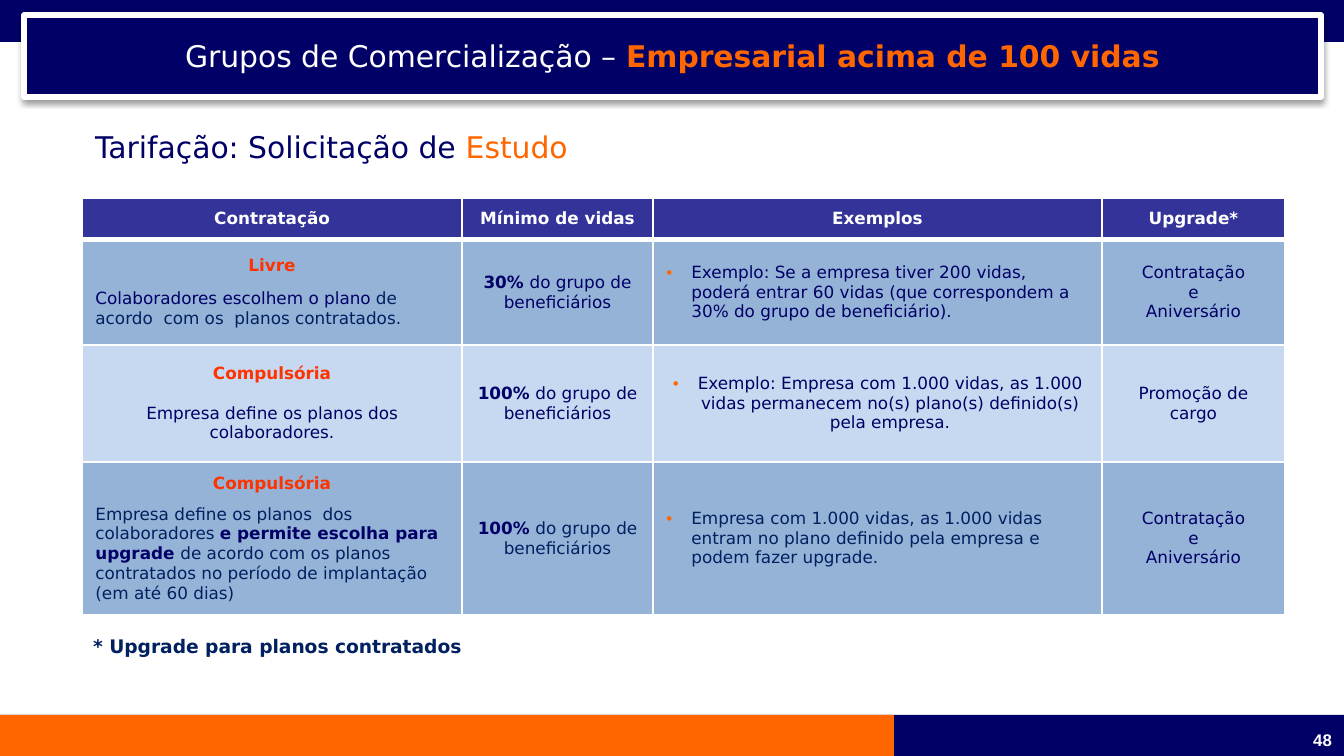
from lxml import etree
from pptx import Presentation
from pptx.dml.color import RGBColor
from pptx.enum.shapes import MSO_SHAPE
from pptx.enum.text import MSO_ANCHOR, MSO_AUTO_SIZE, PP_ALIGN
from pptx.util import Emu, Pt

RECTANGLE = MSO_SHAPE.RECTANGLE
MIDDLE = MSO_ANCHOR.MIDDLE
NO_FIT = MSO_AUTO_SIZE.NONE
LEFT, CENTER = PP_ALIGN.LEFT, PP_ALIGN.CENTER
NAMESPACE = "http://schemas.openxmlformats.org/drawingml/2006/main"
SCALE = 914400 / 134.4
WIDTH, HEIGHT = 1344, 756
FONT = "DejaVu Sans"
NAVY, ORANGE, WHITE = "000066", "FF6600", "FFFFFF"
INDIGO, RED, INK = "333399", "FF3300", "002060"
BLUE, PALE = "95B3D7", "C6D9F1"

COLUMNS = [380, 191, 449, 183]
ROW_HEIGHTS = [42, 105, 117, 153]
HEADINGS = ["Contratação", "Mínimo de vidas", "Exemplos", "Upgrade*"]


def px(length):
    """Turn pixels into EMU."""
    return Emu(round(length * SCALE))


def color(value):
    """Turn a hex string into a colour."""
    return RGBColor.from_string(value)


def element(markup):
    """Read one drawing element from its markup."""
    head, tail = markup.split(">", 1)
    mark = "/" if head.endswith("/") else ""
    head = head.rstrip("/")
    return etree.fromstring(f'{head} xmlns:a="{NAMESPACE}"{mark}>{tail}')


def span(text, ink=NAVY, bold=False):
    """Describe a stretch of text."""
    return text, ink, bold


def paragraph(*spans, align=CENTER, before=0, bullet=False):
    """Describe a paragraph."""
    return spans, align, before, bullet


def add_bullet(para):
    """Give a paragraph an orange bullet and a hanging indent."""
    properties = para._p.get_or_add_pPr()
    properties.set("marL", str(px(25)))
    properties.set("indent", str(-px(25)))
    properties.append(element(f'<a:buClr><a:srgbClr val="{ORANGE}"/></a:buClr>'))
    properties.append(element('<a:buFont typeface="Arial"/>'))
    properties.append(element('<a:buChar char="•"/>'))


def write(frame, paragraphs, size, font=FONT):
    """Fill a text frame with paragraphs."""
    for index, (spans, align, before, bullet) in enumerate(paragraphs):
        para = frame.add_paragraph() if index else frame.paragraphs[0]
        para.alignment = align
        para.space_before = Pt(before)
        if bullet:
            add_bullet(para)
        for text, ink, bold in spans:
            run = para.add_run()
            run.text = text
            run.font.name = font
            run.font.size = Pt(size)
            run.font.bold = bold
            run.font.color.rgb = color(ink)


def add_band(page, box, fill):
    """Draw a plain band of colour."""
    band = page.shapes.add_shape(RECTANGLE, *map(px, box))
    band.shadow.inherit = False
    band.fill.solid()
    band.fill.fore_color.rgb = color(fill)
    band.line.fill.background()


def add_label(page, box, spans, size, font=FONT):
    """Place a single line of text."""
    label = page.shapes.add_textbox(*map(px, box))
    label.text_frame.word_wrap = False
    write(label.text_frame, [paragraph(*spans, align=LEFT)], size, font)


def place_title(page, box, spans):
    """Shape the title placeholder into the banner."""
    title = page.shapes.title
    page.shapes._spTree.append(title._element)
    title.left, title.top, title.width, title.height = map(px, box)
    properties = title._element.spPr
    properties.append(element(
        '<a:prstGeom prst="round2DiagRect"><a:avLst>'
        '<a:gd name="adj1" fmla="val 45500"/><a:gd name="adj2" fmla="val 0"/>'
        '</a:avLst></a:prstGeom>'))
    title.fill.solid()
    title.fill.fore_color.rgb = color(NAVY)
    title.line.color.rgb = color(WHITE)
    title.line.width = Pt(3)
    properties.append(element(
        f'<a:effectLst><a:outerShdw blurRad="{Pt(3.1)}" dist="{Pt(1.6)}" dir="5400000">'
        '<a:srgbClr val="000000"><a:alpha val="38000"/></a:srgbClr>'
        '</a:outerShdw></a:effectLst>'))
    frame = title.text_frame
    frame.word_wrap = True
    frame.auto_size = NO_FIT
    frame.vertical_anchor = MIDDLE
    write(frame, [paragraph(*spans)], 16)


def format_cell(cell, paragraphs, fill, top, bottom):
    """Write, fill and border one table cell."""
    cell.vertical_anchor = MIDDLE
    cell.fill.solid()
    cell.fill.fore_color.rgb = color(fill)
    write(cell.text_frame, paragraphs, 9)
    borders = [("lnL", 1), ("lnR", 1), ("lnT", top), ("lnB", bottom)]
    for index, (side, width) in enumerate(borders):
        cell._tc.get_or_add_tcPr().insert(index, element(
            f'<a:{side} w="{Pt(width)}"><a:solidFill>'
            f'<a:srgbClr val="{WHITE}"/></a:solidFill></a:{side}>'))


def minimum(share, ink=NAVY):
    """Describe the smallest share of lives."""
    return [paragraph(span(share + " ", bold=True), span("do grupo de beneficiários", ink))]


def plan_rows():
    """List the cell contents of each kind of contract."""
    moments = [paragraph(span(text)) for text in ("Contratação", "e", "Aniversário")]
    compulsory = paragraph(span("Compulsória", RED, True))
    free = [
        paragraph(span("Livre", RED, True)),
        paragraph(span("Colaboradores escolhem o plano"),
                  span(" de acordo  com os  planos contratados.", INK),
                  align=LEFT, before=7)]
    fixed = [
        compulsory,
        paragraph(span("Empresa define os planos dos colaboradores."), before=10.5)]
    flexible = [
        compulsory,
        paragraph(span("Empresa define os planos  dos colaboradores ", INK),
                  span("e permite escolha para  upgrade ", bold=True),
                  span("de acordo com os planos contratados no período de "
                       "implantação (em até 60 dias)", INK),
                  align=LEFT, before=6)]
    free_example = span("Exemplo: Se a empresa tiver 200 vidas, poderá entrar 60 vidas "
                        "(que correspondem a 30% do grupo de beneficiário).")
    fixed_example = span("Exemplo: Empresa com 1.000 vidas, as 1.000 vidas permanecem "
                         "no(s) plano(s) definido(s) pela empresa.")
    flexible_example = span("Empresa com 1.000 vidas, as 1.000 vidas entram no plano "
                            "definido pela empresa e podem fazer upgrade.", INK)
    return [
        [free, minimum("30%"), [paragraph(free_example, align=LEFT, bullet=True)], moments],
        [fixed, minimum("100%"), [paragraph(fixed_example, bullet=True)],
         [paragraph(span("Promoção de cargo"))]],
        [flexible, minimum("100%", INK),
         [paragraph(flexible_example, align=LEFT, bullet=True)], moments]]


def add_plan_table(page, left, top):
    """Build the table of contract kinds."""
    headings = [[paragraph(span(text, WHITE, True))] for text in HEADINGS]
    rows = [headings] + plan_rows()
    box = (left, top, sum(COLUMNS), sum(ROW_HEIGHTS))
    table = page.shapes.add_table(len(rows), len(COLUMNS), *map(px, box)).table
    for column, width in zip(table.columns, COLUMNS):
        column.width = px(width)
    for index, (row, height) in enumerate(zip(table.rows, ROW_HEIGHTS)):
        row.height = px(height)
        fill = [INDIGO, BLUE, PALE, BLUE][index]
        top_width = 3 if index == 1 else 1
        bottom_width = 3 if index == 0 else 1
        for cell, paragraphs in zip(row.cells, rows[index]):
            format_cell(cell, paragraphs, fill, top_width, bottom_width)


def add_footer(page, box, number):
    """Draw the footer bands and the page number."""
    left, top, width, height = box
    add_band(page, box, NAVY)
    add_band(page, (left, top, 894, height), ORANGE)
    add_label(page, (left + 1300, top + 8, 55, 32), [span(number, WHITE, True)], 9, "Arial")


def main():
    """Build and save the slide."""
    deck = Presentation()
    deck.slide_width, deck.slide_height = px(WIDTH), px(HEIGHT)
    page = deck.slides.add_slide(deck.slide_layouts[5])
    add_band(page, (0, 0, WIDTH, 42), NAVY)
    add_footer(page, (0, 715, WIDTH, 41), "48")
    place_title(page, (24, 15, 1297, 82), [
        span("Grupos de Comercialização – ", WHITE),
        span("Empresarial acima de 100 vidas", ORANGE, True)])
    add_plan_table(page, 82, 198)
    add_label(page, (82, 122, 520, 50),
              [span("Tarifação: Solicitação de "), span("Estudo", ORANGE)], 16)
    add_label(page, (80, 628, 398, 36),
              [span("* Upgrade para planos contratados", INK, True)], 10)
    deck.save("out.pptx")


if __name__ == "__main__":
    main()
